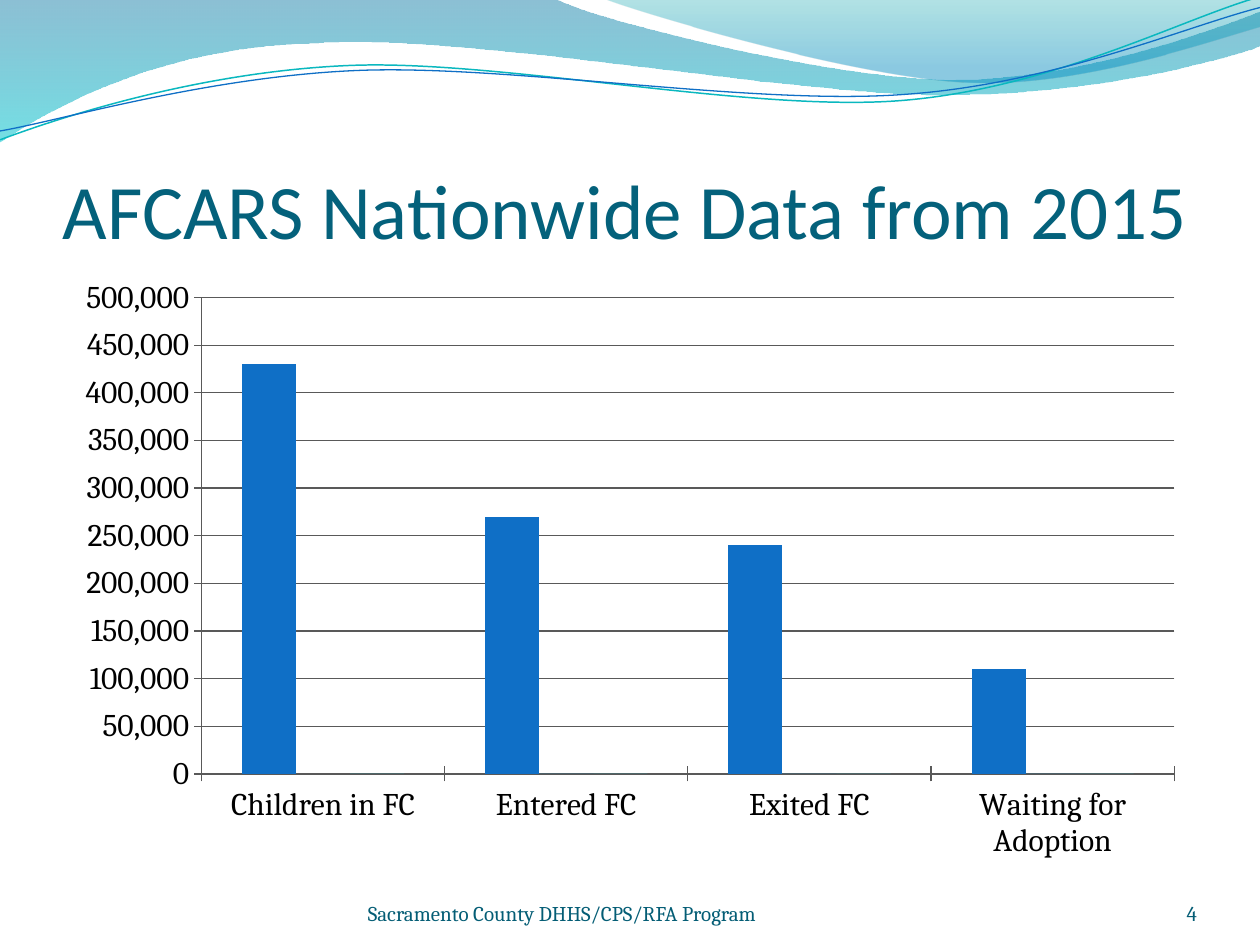
"""Build the AFCARS nationwide data slide."""
import math
from dataclasses import dataclass
from typing import NamedTuple

from lxml import etree
from pptx import Presentation
from pptx import util as u
from pptx.chart import data as chart_data
from pptx.dml import color
from pptx.enum import chart as chart_enum
from pptx.enum import text
from pptx.oxml import ns

COLUMNS, ROWS = 10, 7.5
CELL = u.Inches(1)
TILT = 2.7


@dataclass(frozen=True)
class Theme:
    """Colours, fonts and type sizes."""
    title: str = "04617B"
    footer: str = "045D75"
    ink: str = "000000"
    axis: str = "595959"
    bars: tuple = ("0F6FC6", "009DD9", "0BD0D9")
    wide_wave: tuple = ((0, "0074A1", 45), (1, "00C6CF", 55))
    short_wave: tuple = ((0, "00A1A9", 30), (0.8, "008BBF", 45))
    teal_line: str = "0AB8BF"
    blue_line: str = "0F6FC6"
    heading_font: str = "Calibri"
    body_font: str = "Cambria"
    title_size: int = 44
    chart_size: int = 18
    footer_size: int = 12


THEME = Theme()


class Box(NamedTuple):
    """A region in grid columns and rows."""
    left: float
    top: float
    width: float
    height: float

    def lengths(self):
        """Return the region as slide lengths."""
        return [u.Emu(round(value * CELL)) for value in self]


def rgb(value):
    """Return a colour object for a hex value."""
    return color.RGBColor.from_string(value)


def turn(point, centre, degrees):
    """Return the point turned clockwise about the centre."""
    angle = math.radians(degrees)
    x, y = point[0] - centre[0], point[1] - centre[1]
    return (centre[0] + x * math.cos(angle) - y * math.sin(angle),
            centre[1] + x * math.sin(angle) + y * math.cos(angle))


def add_outline(slide, box, segments, close):
    """Draw lines and cubic curves whose points are offsets from the box corner."""
    scaled = [[(round((box.left + x) * CELL), round((box.top + y) * CELL))
               for x, y in segment] for segment in segments]
    anchors = [segment[-1] for segment in scaled]
    builder = slide.shapes.build_freeform(*anchors[0])
    builder.add_line_segments(anchors[1:], close=close)
    shape = builder.convert_to_shape()
    shape.shadow.inherit = False
    lines = list(shape._element.iter(ns.qn("a:lnTo")))
    for line, segment in zip(lines, scaled[1:]):
        if len(segment) == 1:
            continue
        curve = etree.Element(ns.qn("a:cubicBezTo"))
        for x, y in segment:
            etree.SubElement(curve, ns.qn("a:pt"), x=str(x - shape.left), y=str(y - shape.top))
        line.getparent().replace(line, curve)
    return shape


def add_wave(slide, box, segments, stops):
    """Draw a closed wave with a translucent vertical gradient."""
    shape = add_outline(slide, box, segments, True)
    shape.line.fill.background()
    shape.fill.gradient()
    shape.fill.gradient_angle = 270
    for stop, (position, value, _) in zip(shape.fill.gradient_stops, stops):
        stop.position = position
        stop.color.rgb = rgb(value)
    for element, (_, _, opacity) in zip(shape._element.iter(ns.qn("a:srgbClr")), stops):
        etree.SubElement(element, ns.qn("a:alpha"), val=str(opacity * 1000))


def add_strand(slide, box, centre, segments, value, weight):
    """Draw an open curved line in a tilted frame."""
    level = [[turn(point, centre, TILT) for point in segment] for segment in segments]
    shape = add_outline(slide, box, level, False)
    shape.rotation = 360 - TILT
    shape.fill.background()
    shape.line.color.rgb = rgb(value)
    shape.line.width = u.Pt(weight)


def add_header(slide, box):
    """Draw the waves and strands across the top."""
    add_wave(slide, box, [
        [(0, 0)], [(4.4, -0.01)],
        [(4.76, 0.17), (6.64, 0.63), (7.58, 0.63)],
        [(8.53, 0.63), (9.58, 0.26), (10, 0.09)],
        [(10.01, 0.36)],
        [(9.83, 0.44), (8.7, 0.76), (7.46, 0.75)],
        [(6.22, 0.75), (3.82, 0.28), (2.57, 0.34)],
        [(1.29, 0.36), (0.46, 0.83), (-0.01, 1.13)],
        [(0, 0)]], THEME.wide_wave)
    add_wave(slide, box, [
        [(4.79, -0.01)],
        [(5.09, 0.11), (6.82, 0.62), (7.69, 0.65)],
        [(8.56, 0.69), (9.61, 0.32), (10, 0.21)],
        [(10, 0)], [(4.79, -0.01)]], THEME.short_wave)
    add_strand(slide, box, (4.99, 0.58), [
        [(0, 1.11)],
        [(0.48, 0.93), (1.58, 0.57), (2.77, 0.52)],
        [(3.95, 0.47), (5.93, 0.89), (7.13, 0.8)],
        [(8.33, 0.71), (9.38, 0.15), (9.98, -0.02)]], THEME.teal_line, 0.85)
    add_strand(slide, box, (5, 0.59), [
        [(0, 1.04)],
        [(0.47, 0.96), (1.64, 0.61), (2.83, 0.56)],
        [(4.03, 0.51), (5.97, 0.84), (7.17, 0.75)],
        [(8.36, 0.67), (9.41, 0.21), (10, 0.06)]], THEME.blue_line, 0.75)


def add_label(slide, box, wording, font, size, value, align=text.PP_ALIGN.LEFT, inset=0):
    """Place one line of text on the bottom of the box."""
    frame = slide.shapes.add_textbox(*box.lengths()).text_frame
    frame.word_wrap = True
    frame.vertical_anchor = text.MSO_ANCHOR.BOTTOM
    frame.margin_left = frame.margin_right = frame.margin_bottom = 0
    frame.margin_top = u.Inches(inset)
    frame.text = wording
    paragraph = frame.paragraphs[0]
    paragraph.alignment = align
    run_font = paragraph.runs[0].font
    run_font.name, run_font.size = font, u.Pt(size)
    run_font.color.rgb = rgb(value)


def add_column_chart(slide, box):
    """Place the clustered column chart."""
    data = chart_data.CategoryChartData(number_format="#,##0")
    data.categories = ["Children in FC", "Entered FC", "Exited FC", "Waiting for Adoption"]
    data.add_series("Series 1", (430000, 270000, 240000, 110000))
    data.add_series("Series 2", (None, 0, 0, 0))
    data.add_series("Series 3", (0, 0, 0, 0))
    chart = slide.shapes.add_chart(
        chart_enum.XL_CHART_TYPE.COLUMN_CLUSTERED, *box.lengths(), data).chart
    chart.has_legend = chart.has_title = False
    chart.font.name, chart.font.size = THEME.body_font, u.Pt(THEME.chart_size)
    chart.font.color.rgb = rgb(THEME.ink)
    plot = chart.plots[0]
    plot.gap_width, plot.overlap, plot.vary_by_categories = 150, 0, False
    for series, value in zip(plot.series, THEME.bars):
        series.format.fill.solid()
        series.format.fill.fore_color.rgb = rgb(value)
    value_axis = chart.value_axis
    value_axis.has_major_gridlines = True
    value_axis.tick_labels.number_format = "#,##0"
    value_axis.tick_labels.number_format_is_linked = False
    for axis in (value_axis, chart.category_axis):
        axis.major_tick_mark = chart_enum.XL_TICK_MARK.CROSS
    for part in (value_axis, chart.category_axis, value_axis.major_gridlines):
        part.format.line.color.rgb = rgb(THEME.axis)
        part.format.line.width = u.Pt(0.75)


def add_footer(slide, box):
    """Place the slide number and the programme name."""
    style = (THEME.body_font, THEME.footer_size, THEME.footer)
    number_box = Box(box.left + box.width - 0.83, box.top, 0.83, box.height)
    name_box = Box(box.left + 2.42, box.top, 3.67, box.height)
    add_label(slide, number_box, "4", *style, align=text.PP_ALIGN.RIGHT)
    add_label(slide, name_box, "Sacramento County DHHS/CPS/RFA Program", *style)


def main():
    """Build and save the presentation."""
    presentation = Presentation()
    presentation.slide_width = u.Emu(int(COLUMNS * CELL))
    presentation.slide_height = u.Emu(int(ROWS * CELL))
    slide = presentation.slides.add_slide(presentation.slide_layouts[6])
    add_header(slide, Box(0, 0, COLUMNS, 1.13))
    add_label(slide, Box(0.5, 0.77, 9, 1.25), "AFCARS Nationwide Data from 2015",
              THEME.heading_font, THEME.title_size, THEME.title, inset=0.05)
    add_column_chart(slide, Box(0.5, 2.12, 9, 4.8))
    add_footer(slide, Box(0.5, 6.95, 9, 0.4))
    presentation.save("out.pptx")


if __name__ == "__main__":
    main()
